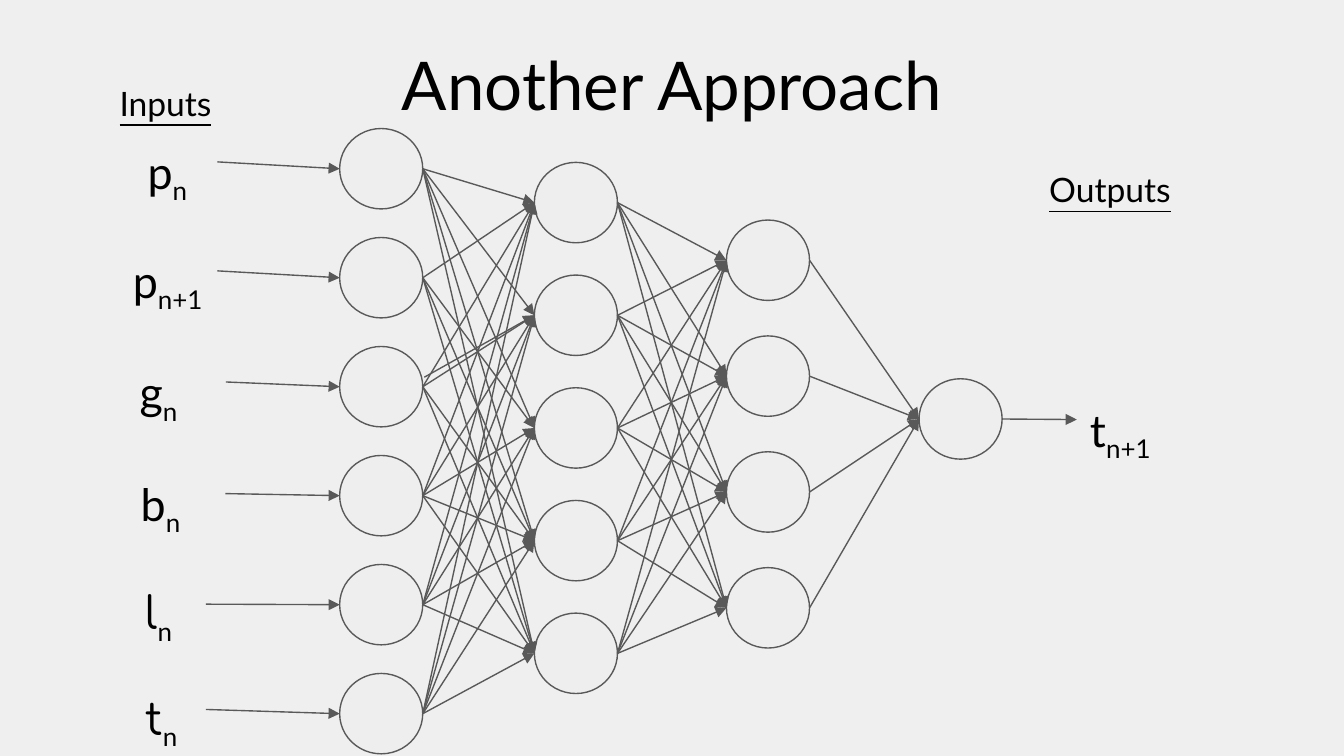
from itertools import product

from lxml.etree import SubElement
from pptx import Presentation
from pptx.dml.color import RGBColor
from pptx.enum.shapes import MSO_CONNECTOR, MSO_SHAPE
from pptx.enum.text import MSO_ANCHOR, MSO_AUTO_SIZE, PP_ALIGN
from pptx.oxml.ns import qn
from pptx.util import Cm, Pt

COLORS = {"background": "EFEFEF", "node": "EEEEEE", "line": "595959", "text": "000000"}
NODE_WIDTH, NODE_HEIGHT = 1.57, 1.52
INPUTS = [
    ("p", "n", "Lato", (2.54, 2.49, 1.57, 1.14)),
    ("p", "n+1", "Lato", (2.26, 4.55, 1.85, 1.14)),
    ("g", "n", "Lato", (2.39, 6.65, 1.88, 1.14)),
    ("b", "n", "Lato", (2.41, 8.76, 1.85, 1.14)),
    ("l", "n", "Comfortaa", (2.49, 10.81, 1.4, 1.22)),
    ("t", "n", "Comfortaa", (2.49, 12.8, 1.4, 1.22)),
]
UNLINKED = {(1, 1), (2, 2)}


def color(name):
    """Return the named palette colour."""
    return RGBColor.from_string(COLORS[name])


def format_font(font, size, name="Lato"):
    """Apply typeface, size and text colour to a font."""
    font.name, font.size = name, Pt(size)
    font.color.rgb = color("text")


def add_title(slide, box, text):
    """Fill the title placeholder and fit it to the box."""
    title = slide.shapes.title
    title.left, title.top, title.width, title.height = map(Cm, box)
    frame = title.text_frame
    frame.text = text
    frame.auto_size = MSO_AUTO_SIZE.NONE
    frame.vertical_anchor = MSO_ANCHOR.BOTTOM
    frame.margin_left = frame.margin_right = Cm(0.25)
    frame.margin_top = frame.margin_bottom = Cm(0.25)
    paragraph = frame.paragraphs[0]
    paragraph.alignment = PP_ALIGN.CENTER
    format_font(paragraph.font, 36)


def add_text(slide, box):
    """Add a wrapping text box and return its first paragraph."""
    frame = slide.shapes.add_textbox(*map(Cm, box)).text_frame
    frame.word_wrap = True
    frame.margin_left = frame.margin_right = Cm(0.25)
    frame.margin_top = frame.margin_bottom = Cm(0.25)
    return frame.paragraphs[0]


def add_heading(slide, box, text):
    """Add an underlined column heading."""
    paragraph = add_text(slide, box)
    paragraph.add_run().text = text
    format_font(paragraph.font, 18)
    paragraph.font.underline = True


def add_variable(slide, box, symbol, index, symbol_font="Lato"):
    """Add a variable symbol with its subscript index."""
    paragraph = add_text(slide, box)
    for text, name in ((symbol, symbol_font), (index, "Lato")):
        run = paragraph.add_run()
        run.text = text
        format_font(run.font, 24, name)
    run.font._element.set("baseline", "-25000")


def add_arrow(slide, start, end):
    """Draw a thin straight arrow between two points."""
    arrow = slide.shapes.add_connector(MSO_CONNECTOR.STRAIGHT, *map(Cm, (*start, *end)))
    arrow.line.color.rgb = color("line")
    arrow.line.width = Pt(0.75)
    SubElement(arrow.line._get_or_add_ln(), qn("a:tailEnd"), type="triangle")
    SubElement(arrow._element.spPr, qn("a:effectLst"))


def add_layer(slide, left, top, pitch, count):
    """Stack the nodes of one layer and return their boxes."""
    boxes = [(left, top + row * pitch, NODE_WIDTH, NODE_HEIGHT) for row in range(count)]
    for box in boxes:
        node = slide.shapes.add_shape(MSO_SHAPE.OVAL, *map(Cm, box))
        node.shadow.inherit = False
        node.fill.solid()
        node.fill.fore_color.rgb = color("node")
        node.line.color.rgb = color("line")
        node.line.width = Pt(0.75)
    return boxes


def left_middle(box):
    """Return the middle of a box's left edge."""
    left, top, _, height = box
    return left, top + height / 2


def right_middle(box):
    """Return the middle of a box's right edge."""
    left, top, width, height = box
    return left + width, top + height / 2


def link_layers(slide, sources, targets, unlinked=frozenset()):
    """Link every source node to every target node except the unlinked pairs."""
    for pair in product(range(len(sources)), range(len(targets))):
        if pair not in unlinked:
            source, target = pair
            add_arrow(slide, right_middle(sources[source]), left_middle(targets[target]))


def add_network(slide, left, top):
    """Draw the network from its top left corner, with inputs and output."""
    input_layer = add_layer(slide, left, top, 2.06, 6)
    first_hidden = add_layer(slide, left + 3.68, top + 0.64, 2.13, 5)
    second_hidden = add_layer(slide, left + 7.31, top + 1.73, 2.19, 4)
    output_layer = add_layer(slide, left + 10.95, top + 4.73, 0, 1)

    link_layers(slide, input_layer, first_hidden, UNLINKED)
    add_arrow(slide, (left + 1.6, top + 4.7), left_middle(first_hidden[1]))
    link_layers(slide, first_hidden, second_hidden)
    link_layers(slide, second_hidden, output_layer)

    for (symbol, index, font_name, box), node in zip(INPUTS, input_layer):
        add_variable(slide, box, symbol, index, font_name)
        add_arrow(slide, right_middle(box), left_middle(node))

    output_box = (20.35, 7.36, 2.62, 1.14)
    add_variable(slide, output_box, "t", "n+1")
    add_arrow(slide, right_middle(output_layer[0]), left_middle(output_box))


def main():
    """Build and save the presentation."""
    presentation = Presentation()
    presentation.slide_width, presentation.slide_height = Cm(25.4), Cm(14.29)
    slide = presentation.slides.add_slide(presentation.slide_layouts[5])
    slide.background.fill.solid()
    slide.background.fill.fore_color.rgb = color("background")
    add_title(slide, (0, 0.48, 25.4, 2.11), "Another Approach")
    add_heading(slide, (2.01, 1.32, 2.72, 1.14), "Inputs")
    add_heading(slide, (19.58, 2.95, 3.35, 1.14), "Outputs")
    add_network(slide, 6.42, 2.43)
    presentation.save("out.pptx")


if __name__ == "__main__":
    main()
